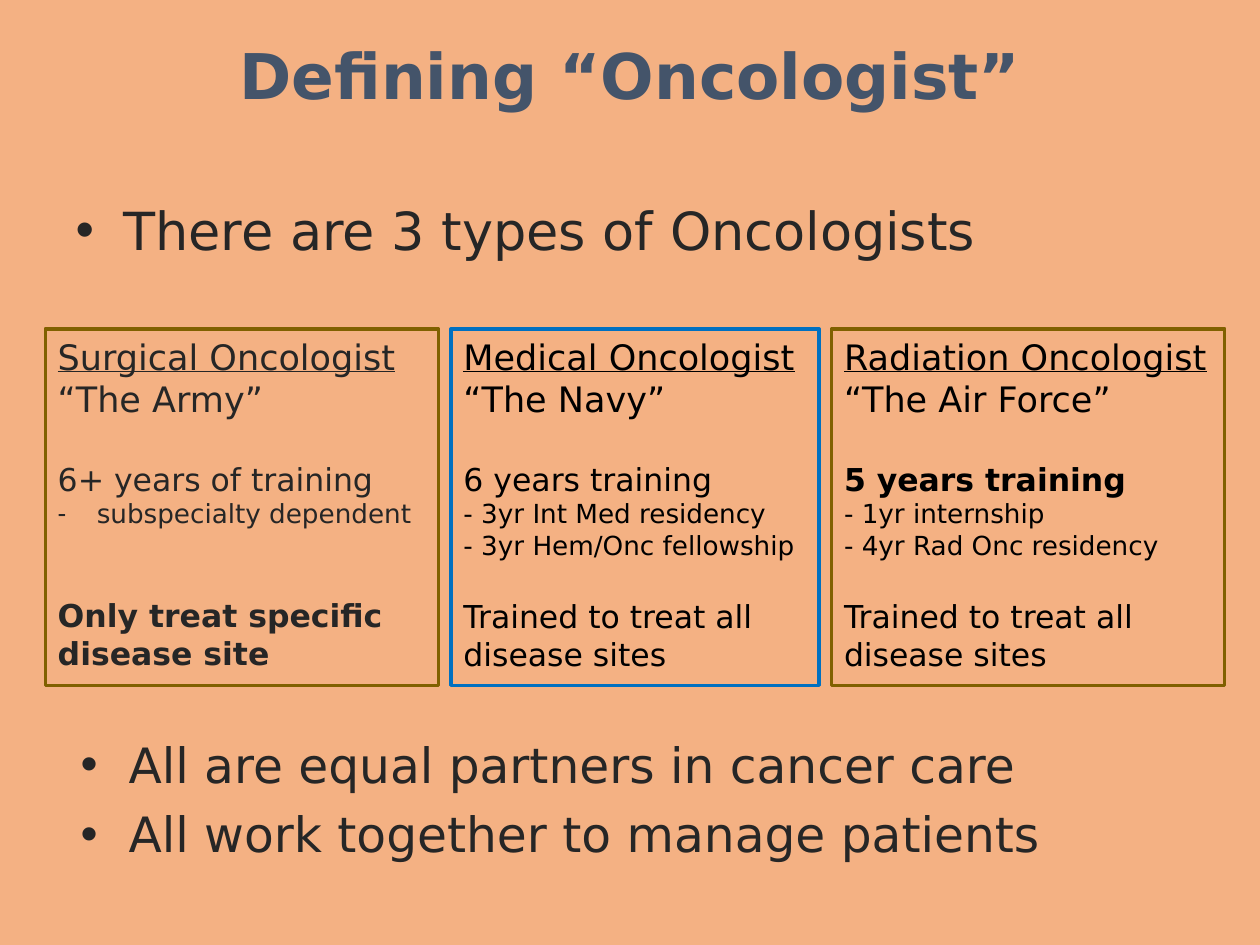
from pptx import Presentation
from pptx.util import Inches, Pt
from pptx.dml.color import RGBColor
from pptx.enum.shapes import MSO_SHAPE
from pptx.enum.text import PP_ALIGN, MSO_ANCHOR, MSO_AUTO_SIZE
from lxml.etree import SubElement
from pptx.oxml.ns import qn

FACE = "DejaVu Sans"
INK = "262626"


def tint(code):
    return RGBColor.from_string(code)


def style(para, size, color, bold=False, line=False):
    for run in para.runs:
        font = run.font
        font.name, font.size = FACE, Pt(size)
        font.bold, font.underline = bold, line
        font.color.rgb = tint(color)


def bullet(para, mark, indent):
    props = para._p.get_or_add_pPr()
    props.set("marL", str(Inches(indent)))
    props.set("indent", str(-Inches(indent)))
    SubElement(props, qn("a:buFont")).set("typeface", "Arial")
    SubElement(props, qn("a:buChar")).set("char", mark)


def place(shape, box):
    left, top, width, height = map(Inches, box)
    shape.left, shape.top = left, top
    shape.width, shape.height = width, height
    frame = shape.text_frame
    frame.word_wrap = True
    frame.auto_size = MSO_AUTO_SIZE.NONE
    return frame


def heading(shape, box, text):
    frame = place(shape, box)
    frame.text = text
    frame.vertical_anchor = MSO_ANCHOR.MIDDLE
    para = frame.paragraphs[0]
    para.alignment = PP_ALIGN.CENTER
    para.line_spacing = 0.9
    style(para, 36, "44546A", bold=True)


def points(shape, box, lines, size):
    frame = place(shape, box)
    frame.text = "\n".join(lines)
    frame.vertical_anchor = MSO_ANCHOR.TOP
    frame.margin_top = Inches(0.08)
    for i, para in enumerate(frame.paragraphs):
        para.space_before = Pt(size * 0.23 if i else 0)
        bullet(para, "•", 0.38)
        style(para, size, INK)


def card(slide, box, edge, color, name, nick, years, steps, scope, strong):
    shape = slide.shapes.add_shape(MSO_SHAPE.RECTANGLE, *map(Inches, box))
    shape.shadow.inherit = False
    shape.fill.background()
    shape.line.color.rgb = tint(edge)
    shape.line.width = Pt(2)
    frame = place(shape, box)
    frame.vertical_anchor = MSO_ANCHOR.TOP
    frame.text = "\n".join([name, nick, years, *steps, scope])
    paras = frame.paragraphs
    for para in paras:
        para.alignment = PP_ALIGN.LEFT
        style(para, 15, color)
    style(paras[0], 20, color, line=True)
    style(paras[1], 20, color)
    style(paras[2], 18, color, bold=strong == years)
    style(paras[-1], 18, color, bold=strong == scope)
    paras[2].space_before = Pt(23.3)
    paras[-1].space_before = Pt(21 if len(steps) == 2 else 38.5)
    if len(steps) == 1:
        bullet(paras[3], "-", 0.31)


def cards(slide, left, top, height, gap):
    gold, blue, black = "806000", "0070C0", "000000"
    every = "Trained to treat all disease sites"
    site = "Only treat specific disease site"
    rows = [
        (3.12, gold, INK, "Surgical Oncologist", "“The Army”",
         "6+ years of training", ["subspecialty dependent"], site, site),
        (2.92, blue, black, "Medical Oncologist", "“The Navy”",
         "6 years training",
         ["- 3yr Int Med residency", "- 3yr Hem/Onc fellowship"], every, None),
        (3.12, gold, black, "Radiation Oncologist", "“The Air Force”",
         "5 years training",
         ["- 1yr internship", "- 4yr Rad Onc residency"], every,
         "5 years training"),
    ]
    for width, *parts in rows:
        card(slide, (left, top, width, height), *parts)
        left += width + gap


def main():
    deck = Presentation()
    deck.slide_width, deck.slide_height = Inches(10), Inches(7.5)
    slide = deck.slides.add_slide(deck.slide_layouts[3])
    fill = slide.background.fill
    fill.solid()
    fill.fore_color.rgb = tint("F4B183")
    title, intro, close = list(slide.placeholders)[:3]
    heading(title, (0.5, 0, 9, 1.25), "Defining “Oncologist”")
    points(intro, (0.5, 1.49, 9, 0.81),
           ["There are 3 types of Oncologists"], 30)
    cards(slide, 0.36, 2.61, 2.83, 0.1)
    points(close, (0.54, 5.75, 9.46, 1.08),
           ["All are equal partners in cancer care",
            "All work together to manage patients"], 27.8)
    deck.save("out.pptx")


if __name__ == "__main__":
    main()
